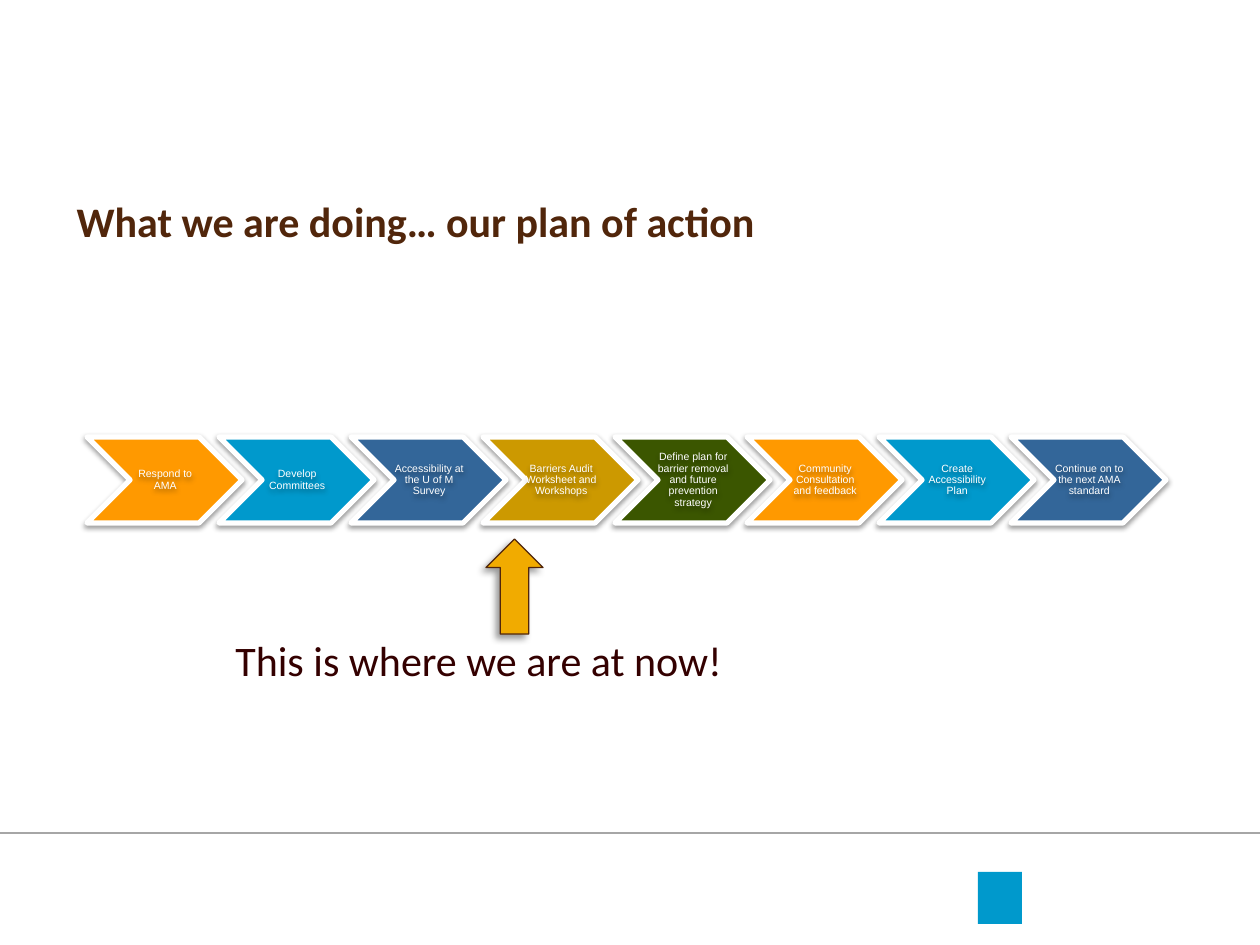
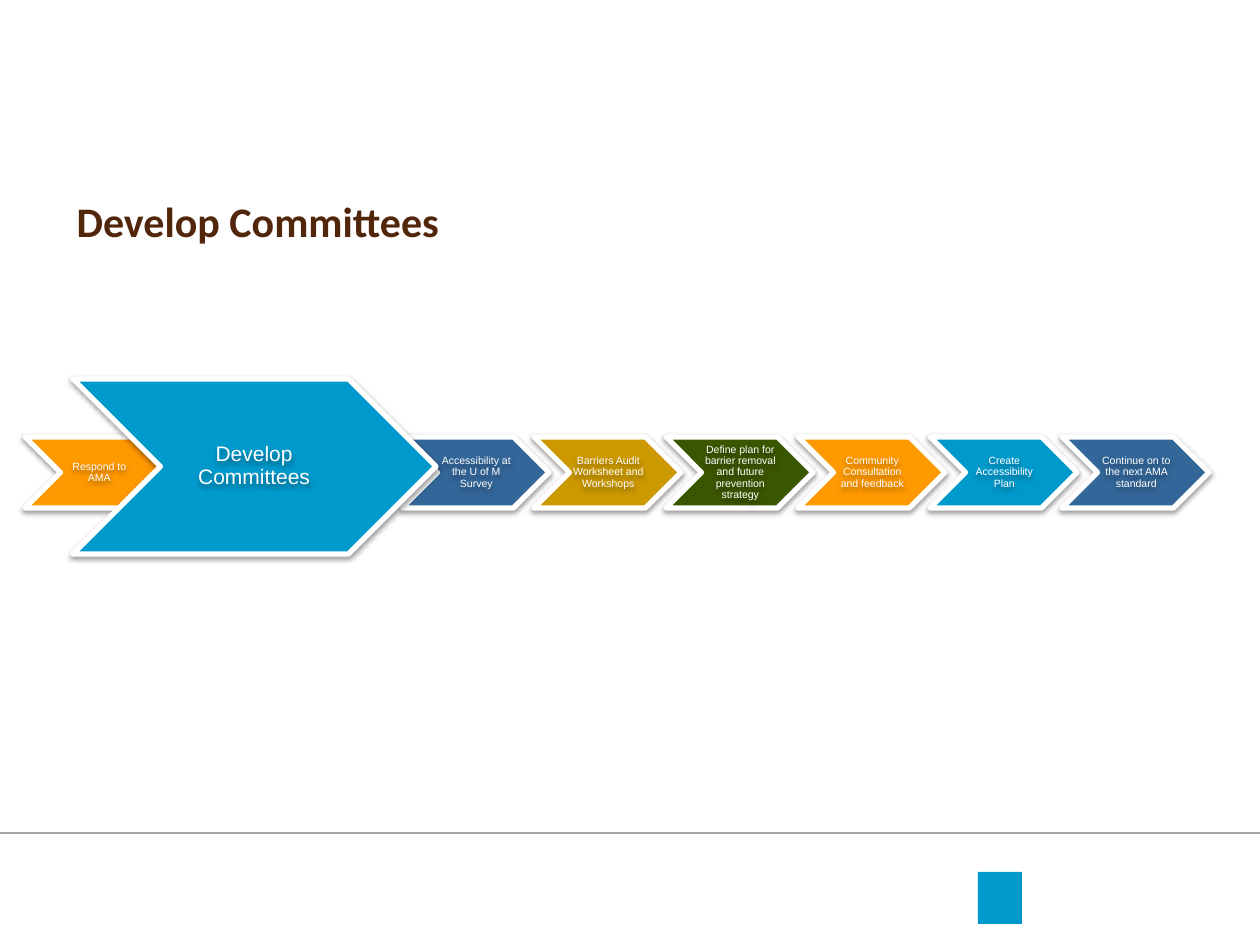
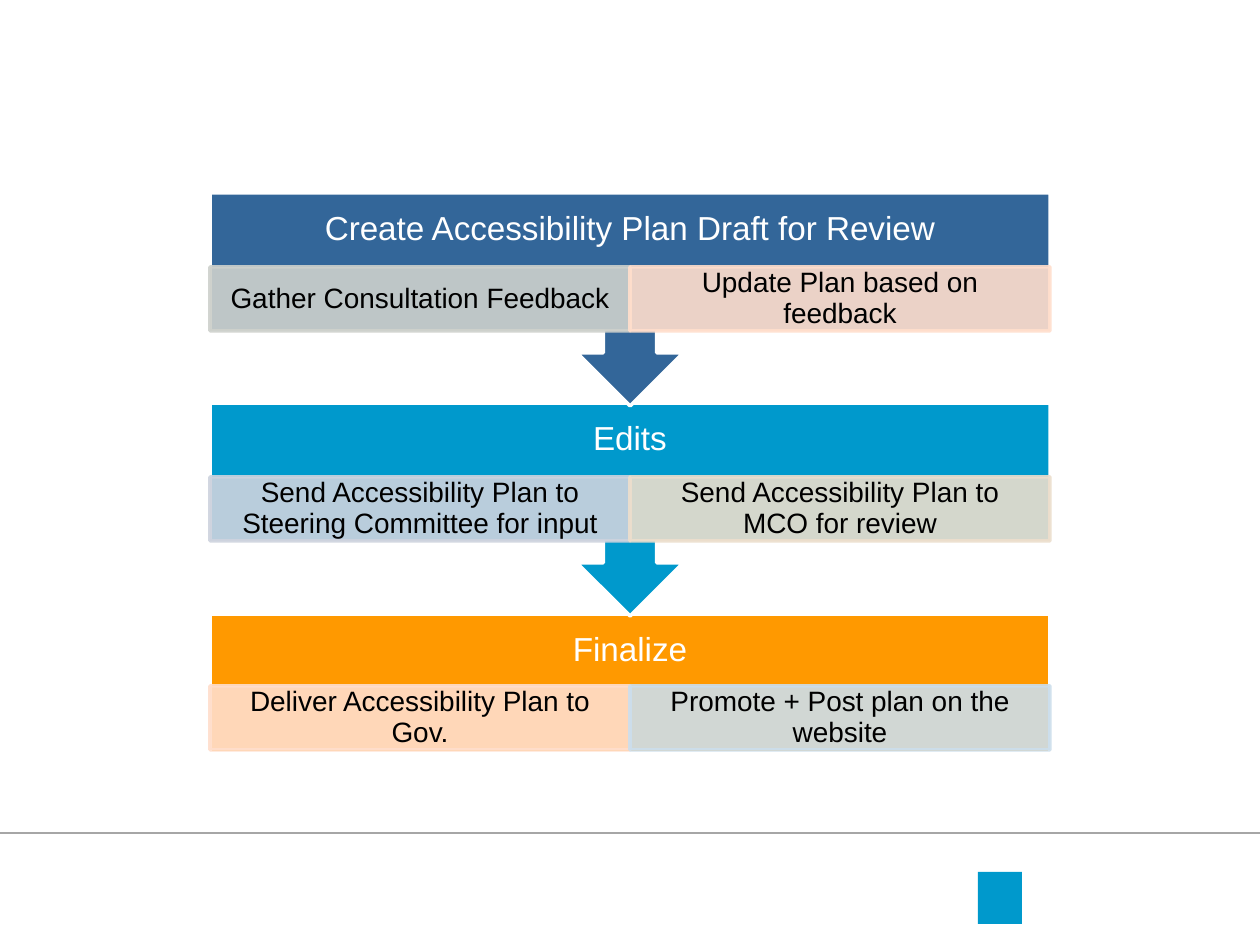
import pptx
import pptx.dml.color
import pptx.enum.shapes
import pptx.enum.text
import pptx.util
from lxml import etree

KIND = pptx.enum.shapes.MSO_SHAPE
ALIGN = pptx.enum.text.PP_ALIGN
ANCHOR = pptx.enum.text.MSO_ANCHOR
NS = "http://schemas.openxmlformats.org/drawingml/2006/main"

WIDE, HIGH, DPI = 1260, 945, 126
WHITE, BLACK, BROWN, WINE = "FFFFFF", "000000", "51260B", "340000"
BLUE, NAVY, ORANGE, GOLD = "0099CC", "336699", "FF9900", "F1AB00"
OCHRE, GREEN, GREY = "CC9900", "3B5600", "A6A6A6"

STEPS = [
    ("Respond to AMA", ORANGE),
    ("Develop Committees", BLUE),
    ("Accessibility at the U of M Survey", NAVY),
    ("Barriers Audit Worksheet and Workshops", OCHRE),
    ("Define plan for barrier removal and future prevention strategy", GREEN),
    ("Community Consultation and feedback", ORANGE),
    ("Create Accessibility Plan", BLUE),
    ("Continue on to the next AMA standard", NAVY),
]
STAGES = [
    ("Create Accessibility Plan Draft for Review", NAVY,
     [("Gather Consultation Feedback", "CED1CC"),
      ("Update Plan based on feedback", "FFDECC")]),
    ("Edits", BLUE,
     [("Send Accessibility Plan to Steering Committee for input", "CED3DE"),
      ("Send Accessibility Plan to MCO for review", "ECDECC")]),
    ("Finalize", ORANGE,
     [("Deliver Accessibility Plan to Gov.", "FFDECC"),
      ("Promote + Post plan on the website", "CCDEEC")]),
]


def px(n):
    return pptx.util.Emu(round(n * 914400 / DPI))


def rgb(code):
    return pptx.dml.color.RGBColor.from_string(code)


def sub(node, tag, **attrs):
    return etree.SubElement(node, f"{{{NS}}}{tag}", attrs)


def fade(paint, part):
    """Make the fill and line partly transparent."""
    for node in paint.iter(f"{{{NS}}}srgbClr"):
        sub(node, "alpha", val=str(part * 1000))


def shade(shape, part=38, blur=3.1, dist=1.6, turn=90):
    """Give a shape an outer shadow; sizes in points, turn in degrees."""
    shape.shadow.inherit = False
    fx = shape.element.spPr.find(f"{{{NS}}}effectLst")
    cast = sub(fx, "outerShdw", blurRad=str(round(blur * 12700)),
               dist=str(round(dist * 12700)), dir=str(turn * 60000),
               algn="ctr", rotWithShape="0")
    tone = sub(cast, "srgbClr", val=BLACK)
    sub(tone, "alpha", val=str(part * 1000))


def draw(slide, kind, box, fill, line=None, width=0):
    shape = slide.shapes.add_shape(kind, *map(px, box))
    shape.shadow.inherit = False
    shape.fill.solid()
    shape.fill.fore_color.rgb = rgb(fill)
    if line:
        shape.line.color.rgb = rgb(line)
        shape.line.width = pptx.util.Pt(width)
    else:
        shape.line.fill.background()
    return shape


def write(frame, text, size, color, font="Arial", bold=False, align=ALIGN.CENTER):
    frame.word_wrap = True
    para = frame.paragraphs[0]
    para.alignment = align
    run = para.add_run()
    run.text = text
    run.font.name, run.font.size, run.font.bold = font, pptx.util.Pt(size), bold
    run.font.color.rgb = rgb(color)
    return para


def label(slide, box, text, size, color, pads):
    """Add a centred text box; pads are left, top, right and bottom px."""
    area = slide.shapes.add_textbox(*map(px, box))
    frame = area.text_frame
    frame.margin_left, frame.margin_top, frame.margin_right, frame.margin_bottom = map(px, pads)
    frame.vertical_anchor = ANCHOR.MIDDLE
    write(frame, text, size, color).line_spacing = 0.9
    return area


def start(deck, title=None):
    """Add a slide with the shared footer and, if given, a title."""
    slide = deck.slides.add_slide(deck.slide_layouts[5 if title else 6])
    draw(slide, KIND.RECTANGLE, (978, 872, 44, 52), BLUE)
    rule = slide.shapes.add_connector(
        pptx.enum.shapes.MSO_CONNECTOR.STRAIGHT, px(0), px(833), px(WIDE), px(833))
    rule.line.color.rgb = rgb(GREY)
    rule.line.width = pptx.util.Pt(0.75)
    sub(rule.element.spPr, "effectLst")
    if title:
        head = slide.shapes.title
        head.left, head.top, head.width, head.height = map(px, (64, 174, 1071, 94))
        head.text_frame.vertical_anchor = ANCHOR.MIDDLE
        write(head.text_frame, title, 24, BROWN, "Calibri", True, ALIGN.LEFT)
    return slide


def step(slide, box, item, size=6):
    text, fill = item
    left, top, wide, high = box
    shade(draw(slide, KIND.CHEVRON, box, fill, WHITE, 3))
    inner = (left + 0.23 * wide, top, 0.53 * wide, high)
    shade(label(slide, inner, text, size, WHITE, (4, 1, 1, 1)))


def plan(deck):
    slide = start(deck, "What we are doing… our plan of action")
    arrow = draw(slide, KIND.RIGHT_ARROW, (467, 558, 95, 57), GOLD, BROWN, 0.75)
    arrow.rotation = 270
    shade(arrow, 40, 4, 3, 135)
    note = slide.shapes.add_textbox(*map(px, (223, 628, 595, 63)))
    write(note.text_frame, "This is where we are at now!", 24, WINE, "Calibri",
          align=ALIGN.LEFT)
    for i, item in enumerate(STEPS):
        step(slide, (87 + 132 * i, 437, 155, 86), item)


def focus(deck):
    now = 1
    slide = start(deck, STEPS[now][0])
    for i, item in enumerate(STEPS):
        if i != now:
            left = 25 if i < now else 138 + 132 * i
            step(slide, (left, 437, 147, 71), item)
    step(slide, (73, 379, 363, 175), STEPS[now], 12)


def stages(deck):
    slide = start(deck)
    left, wide, bar, row = 210, 840, 74, 64
    tops = [193, 403, 614]
    for i, (name, fill, parts) in reversed(list(enumerate(STAGES))):
        top, last = tops[i], i == len(STAGES) - 1
        kind, high = (KIND.RECTANGLE, 139) if last else (KIND.UP_ARROW_CALLOUT, 213)
        block = draw(slide, kind, (left, top, wide, high), fill, WHITE, 2)
        block.rotation = 0 if last else 180
        label(slide, (left, top, wide, bar), name, 19, WHITE, (19,) * 4)
        drop = top + bar - (2 if last else 0)
        half = wide / len(parts)
        for j, (text, tint) in enumerate(parts):
            box = (left + j * half, drop, half, row)
            cell = draw(slide, KIND.RECTANGLE, box, tint, tint, 2)
            fade(cell.element.spPr, 90)
            label(slide, box, text, 16, BLACK, (15, 3, 15, 3))


def main():
    deck = pptx.Presentation()
    deck.slide_width, deck.slide_height = px(WIDE), px(HIGH)
    plan(deck)
    focus(deck)
    stages(deck)
    deck.save("out.pptx")


if __name__ == "__main__":
    main()
